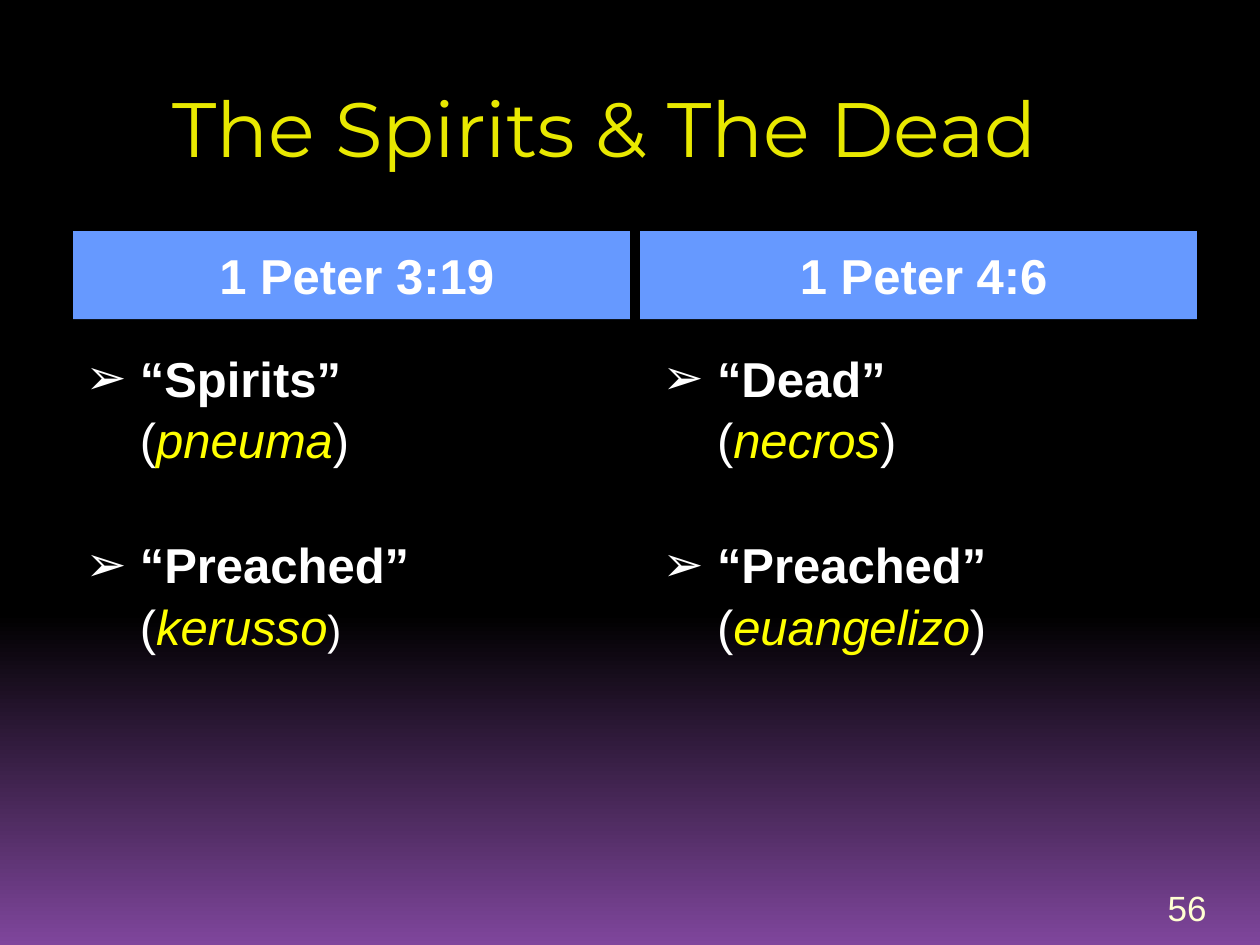
from lxml import etree
from pptx import Presentation
from pptx import util as u
from pptx.dml.color import RGBColor
from pptx.enum import text
from pptx.oxml import ns

WHITE, YELLOW = "FFFFFF", "FFFF00"
HEADER_TOP, HEADER_HEIGHT = 132, 50.4
LIST_TOP, LIST_HEIGHT = 193.7, 311.8
COLUMN_WIDTH = 318.2
COLUMNS = [
    ("1 Peter 3:19", 41.8, 36,
     [("“Spirits”", "pneuma", 28), ("“Preached”", "kerusso", 24)]),
    ("1 Peter 4:6", 365.8, 365.8,
     [("“Dead”", "necros", 28), ("“Preached”", "euangelizo", 28)]),
]


def rgb(value):
    """Turn a hex string into a colour."""
    return RGBColor.from_string(value)


def add_text(paragraph, words, size=28, color=WHITE, font="Arial", bold=False, italic=False):
    """Add one formatted run to a paragraph."""
    run = paragraph.add_run()
    run.text = words
    run.font.name, run.font.size = font, u.Pt(size)
    run.font.bold, run.font.italic = bold, italic
    run.font.color.rgb = rgb(color)


def set_bullet(paragraph, character="➢", color=WHITE, left=36.7, hanging=31):
    """Give a paragraph a coloured bullet and a hanging indent."""
    properties = paragraph._p.get_or_add_pPr()
    properties.set("marL", str(u.Pt(left)))
    properties.set("indent", str(-u.Pt(hanging)))
    bullet_color = etree.SubElement(properties, ns.qn("a:buClr"))
    etree.SubElement(bullet_color, ns.qn("a:srgbClr"), val=color)
    etree.SubElement(properties, ns.qn("a:buChar"), char=character)


class SlideBuilder:
    """Hold the style and the current slide."""

    def __init__(self, presentation):
        """Add a comparison slide to the presentation."""
        self.slide = presentation.slides.add_slide(presentation.slide_layouts[4])
        self.header_fill = "6699FF"

    def background(self, top, bottom, start):
        """Fade the background downwards from one colour to another."""
        fill = self.slide.background.fill
        fill.gradient()
        fill.gradient_angle = 270
        for stop, color, position in zip(fill.gradient_stops, (top, bottom), (start, 1)):
            stop.color.rgb = rgb(color)
            stop.position = position

    def place(self, shape, left, top, width, height, anchor):
        """Position a shape and prepare its text frame."""
        shape.left, shape.top = u.Pt(left), u.Pt(top)
        shape.width, shape.height = u.Pt(width), u.Pt(height)
        frame = shape.text_frame
        frame.word_wrap = True
        frame.auto_size = text.MSO_AUTO_SIZE.NONE
        frame.vertical_anchor = anchor
        return frame

    def title(self, words):
        """Fill the title placeholder."""
        frame = self.place(self.slide.shapes.title, 39.6, 40.3, 612, 72, text.MSO_ANCHOR.TOP)
        frame.margin_top = u.Pt(5.5)
        paragraph = frame.paragraphs[0]
        paragraph.alignment = text.PP_ALIGN.CENTER
        add_text(paragraph, words, size=44, color="E8E800", font="Montserrat")

    def header(self, index, words, left):
        """Fill a column header placeholder."""
        shape = self.slide.placeholders[index]
        frame = self.place(shape, left, HEADER_TOP, COLUMN_WIDTH, HEADER_HEIGHT,
                           text.MSO_ANCHOR.MIDDLE)
        shape.shadow.inherit = False
        shape.fill.solid()
        shape.fill.fore_color.rgb = rgb(self.header_fill)
        paragraph = frame.paragraphs[0]
        paragraph.alignment = text.PP_ALIGN.CENTER
        paragraph.space_before = u.Pt(7)
        paragraph._p.get_or_add_pPr().set("marL", str(u.Pt(5.8)))
        add_text(paragraph, words, bold=True)

    def terms(self, index, entries, left):
        """Fill a list placeholder with terms and their Greek words."""
        frame = self.place(self.slide.placeholders[index], left, LIST_TOP, COLUMN_WIDTH,
                           LIST_HEIGHT, text.MSO_ANCHOR.TOP)
        for number, (term, greek, closing_size) in enumerate(entries):
            paragraph = frame.add_paragraph() if number else frame.paragraphs[0]
            paragraph.line_spacing = 1.05
            paragraph.space_before, paragraph.space_after = u.Pt(0), u.Pt(36)
            set_bullet(paragraph)
            add_text(paragraph, term, bold=True)
            paragraph.add_line_break()
            add_text(paragraph, "(")
            add_text(paragraph, greek, color=YELLOW, italic=True)
            add_text(paragraph, ")", size=closing_size)

    def page_number(self, words):
        """Add the page number at the bottom right."""
        box = self.slide.shapes.add_textbox(0, 0, 0, 0)
        frame = self.place(box, 660.2, 505.4, 48.2, 28.8, text.MSO_ANCHOR.BOTTOM)
        add_text(frame.paragraphs[0], words, size=20, color="FFFFD2")


def main():
    """Build and save the slide."""
    presentation = Presentation()
    presentation.slide_width, presentation.slide_height = u.Pt(720), u.Pt(540)
    builder = SlideBuilder(presentation)
    builder.background("000000", "7F469C", 0.65)
    builder.title("The Spirits & The Dead")
    for column, (heading, header_left, list_left, entries) in enumerate(COLUMNS):
        builder.header(2 * column + 1, heading, header_left)
        builder.terms(2 * column + 2, entries, list_left)
    builder.page_number("56")
    presentation.save("out.pptx")


if __name__ == "__main__":
    main()
